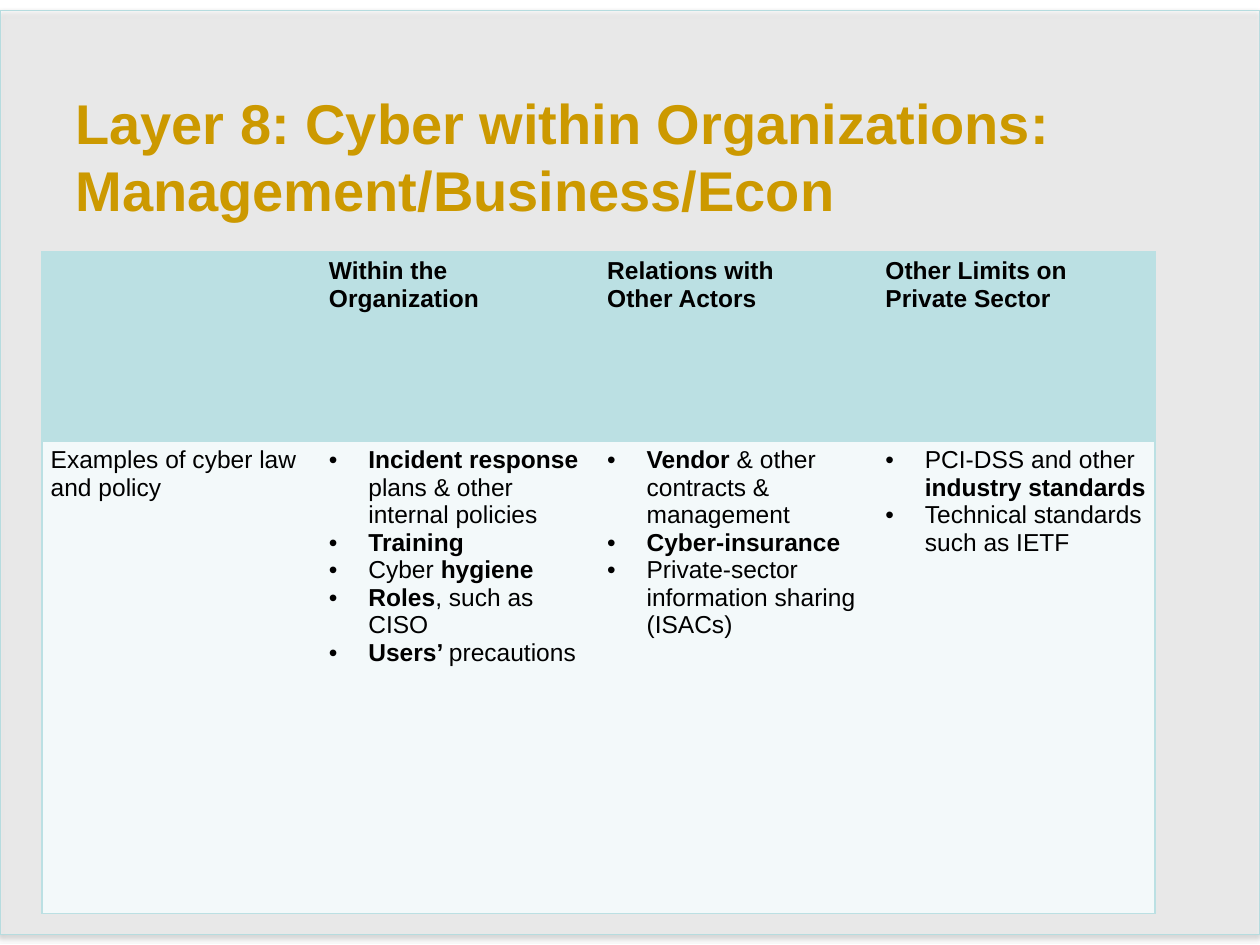
from dataclasses import dataclass

import pptx
import pptx.dml.color
import pptx.enum.shapes
import pptx.enum.text
import pptx.oxml
import pptx.oxml.ns
import pptx.util

Pt = pptx.util.Pt
NS = pptx.oxml.ns.nsdecls("a")


@dataclass(frozen=True)
class Theme:
    font: str = "Arial"
    head: float = 32
    body: float = 14
    gold: str = "CC9900"
    ink: str = "000000"
    teal: str = "BBE0E3"
    pale: str = "F3F9FA"
    white: str = "FFFFFF"
    edge: str = "B6DCDF"


@dataclass(frozen=True)
class Run:
    text: str
    bold: bool = False


@dataclass(frozen=True)
class Cell:
    paras: tuple[tuple[Run, ...], ...] = ()
    bullets: bool = False


THEME = Theme()
COL, ROWS = 159, (108, 270)
INDENT = 22.5


def plain(text: str) -> Run:
    return Run(text)


def bold(text: str) -> Run:
    return Run(text, True)


GRID = (
    (
        Cell(),
        Cell(((bold("Within the"),), (bold("Organization"),))),
        Cell(((bold("Relations with"),), (bold("Other Actors"),))),
        Cell(((bold("Other Limits on Private Sector"),),)),
    ),
    (
        Cell(((plain("Examples of cyber law and policy"),),)),
        Cell((
            (bold("Incident response "), plain("plans & other internal policies")),
            (bold("Training"),),
            (plain("Cyber "), bold("hygiene")),
            (bold("Roles"), plain(", such as CISO")),
            (bold("Users’ "), plain("precautions")),
        ), True),
        Cell((
            (bold("Vendor"), plain(" & other contracts & management")),
            (bold("Cyber-insurance"),),
            (plain("Private-sector information sharing (ISACs)"),),
        ), True),
        Cell((
            (plain("PCI-DSS and other "), bold("industry standards")),
            (plain("Technical standards such as IETF"),),
        ), True),
    ),
)


def rgb(code: str) -> pptx.dml.color.RGBColor:
    return pptx.dml.color.RGBColor.from_string(code)


def add_run(para, run: Run, size: float, color: str) -> None:
    part = para.add_run()
    part.text = run.text
    font = part.font
    font.name, font.size, font.bold = THEME.font, Pt(size), run.bold
    font.color.rgb = rgb(color)


def add_panel(slide) -> None:
    """Draw the translucent backdrop with its soft shadow."""
    panel = slide.shapes.add_shape(
        pptx.enum.shapes.MSO_SHAPE.RECTANGLE, Pt(0), Pt(6), Pt(720), Pt(528))
    panel.fill.solid()
    panel.fill.fore_color.rgb = rgb(THEME.white)
    panel.line.color.rgb = rgb(THEME.edge)
    panel.line.width = Pt(0.75)
    panel.shadow.inherit = False
    props = panel._element.spPr
    tint = props.find(".//" + pptx.oxml.ns.qn("a:srgbClr"))
    tint.append(pptx.oxml.parse_xml(f'<a:alpha {NS} val="46000"/>'))
    props.find(pptx.oxml.ns.qn("a:effectLst")).append(pptx.oxml.parse_xml(
        f'<a:outerShdw {NS} blurRad="{Pt(3.1)}" dist="{Pt(1.8)}" dir="5400000" '
        f'rotWithShape="0"><a:srgbClr val="{THEME.ink}">'
        '<a:alpha val="35000"/></a:srgbClr></a:outerShdw>'))


def add_title(slide, lines: tuple[str, ...]) -> None:
    frame = slide.shapes.add_textbox(Pt(36), Pt(66), Pt(648), Pt(46)).text_frame
    frame.word_wrap = True
    frame.vertical_anchor = pptx.enum.text.MSO_ANCHOR.MIDDLE
    para = frame.paragraphs[0]
    for i, line in enumerate(lines):
        if i:
            para.add_line_break()
        add_run(para, bold(line), THEME.head, THEME.gold)


def set_edges(box, shown: str) -> None:
    """Colour the cell sides named in shown and clear the others."""
    props = box._tc.get_or_add_tcPr()
    for i, side in enumerate("LRTB"):
        paint = (f'<a:solidFill><a:srgbClr val="{THEME.teal}"/></a:solidFill>'
                 if side in shown else "<a:noFill/>")
        props.insert(i, pptx.oxml.parse_xml(
            f'<a:ln{side} {NS} w="{Pt(1)}">{paint}</a:ln{side}>'))


def add_bullet(para) -> None:
    props = para._p.get_or_add_pPr()
    props.set("marL", str(Pt(INDENT)))
    props.set("indent", str(-Pt(INDENT)))
    props.append(pptx.oxml.parse_xml(f'<a:buFont {NS} typeface="{THEME.font}"/>'))
    props.append(pptx.oxml.parse_xml(f'<a:buChar {NS} char="•"/>'))


def fill_cell(box, cell: Cell, back: str, sides: str) -> None:
    box.margin_left = box.margin_right = Pt(5)
    box.margin_top = box.margin_bottom = Pt(3)
    box.fill.solid()
    box.fill.fore_color.rgb = rgb(back)
    set_edges(box, sides)
    frame = box.text_frame
    for i, runs in enumerate(cell.paras):
        para = frame.add_paragraph() if i else frame.paragraphs[0]
        if cell.bullets:
            add_bullet(para)
        for run in runs:
            add_run(para, run, THEME.body, THEME.ink)


def add_grid(slide) -> None:
    count = len(GRID[0])
    table = slide.shapes.add_table(
        len(GRID), count, Pt(24), Pt(144), Pt(COL * count), Pt(sum(ROWS))).table
    table.horz_banding = False
    for col in table.columns:
        col.width = Pt(COL)
    for r, (cells, high, back) in enumerate(zip(GRID, ROWS, (THEME.teal, THEME.pale))):
        table.rows[r].height = Pt(high)
        for c, cell in enumerate(cells):
            sides = "TB" + "L" * (c == 0) + "R" * (c == count - 1)
            fill_cell(table.cell(r, c), cell, back, sides)


def main() -> None:
    deck = pptx.Presentation()
    deck.slide_width, deck.slide_height = Pt(720), Pt(540)
    slide = deck.slides.add_slide(deck.slide_layouts[6])
    add_panel(slide)
    add_title(slide, ("Layer 8: Cyber within Organizations:",
                      "Management/Business/Econ"))
    add_grid(slide)
    deck.save("out.pptx")


if __name__ == "__main__":
    main()
